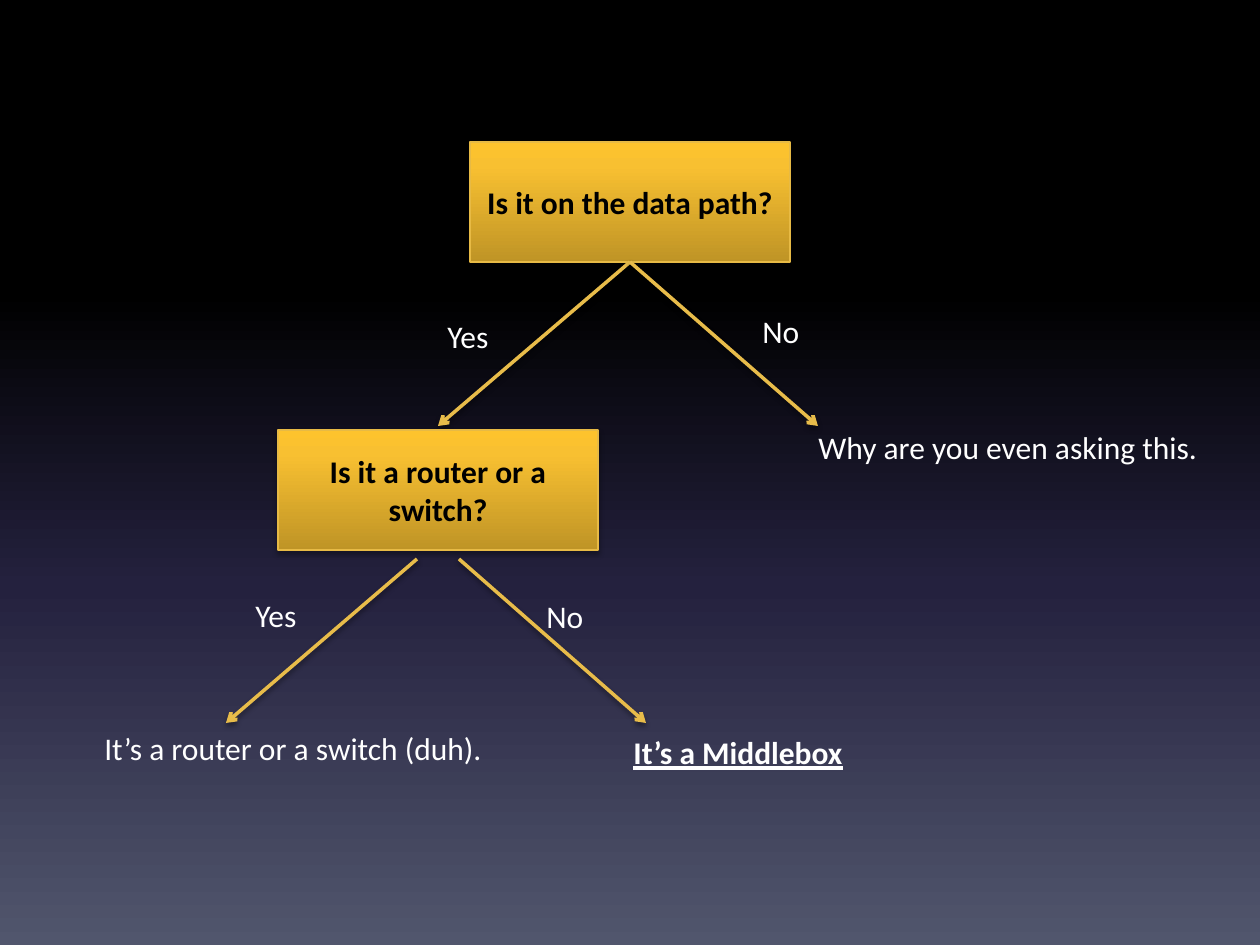
from lxml.etree import SubElement
from pptx import Presentation
from pptx.dml.color import RGBColor
from pptx.enum.shapes import MSO_CONNECTOR as Connector, MSO_SHAPE as Shape
from pptx.enum.text import MSO_ANCHOR as Anchor, MSO_AUTO_SIZE as AutoSize, PP_ALIGN as Align
from pptx.oxml.ns import qn
from pptx.util import Inches, Pt

PX = Inches(1) / 126


def px(*lengths):
    return [round(length * PX) for length in lengths]


def color(hex_string):
    return RGBColor.from_string(hex_string)


class FlowSlide:
    """Hold the style of the decision tree and the slide it is drawn on."""

    backdrop = [(0, "000000"), (31, "000000"), (62, "24213E"), (100, "51566D")]
    gold = [(0, "BF9426"), (80, "F8C031"), (100, "FDC32D")]
    label_format = {"name": "Calibri", "size": Pt(18)}

    def __init__(self, deck):
        self.page = deck.slides.add_slide(deck.slide_layouts[6])
        self.gradient(self.page.background.fill, self.page.element, self.backdrop, 270)

    def gradient(self, fill, element, stops, angle):
        fill.gradient()
        fill.gradient_angle = angle
        stop_list = next(element.iter(qn("a:gsLst")))
        for stop in list(stop_list):
            stop_list.remove(stop)
        for position, value in stops:
            stop = SubElement(stop_list, qn("a:gs"), pos=str(position * 1000))
            SubElement(stop, qn("a:srgbClr"), val=value)

    def outline(self, item, value, width):
        item.line.color.rgb = color(value)
        item.line.width = Pt(width)

    def shadow(self, item, opacity, distance):
        effects = SubElement(item.element.spPr, qn("a:effectLst"))
        drop = SubElement(effects, qn("a:outerShdw"), blurRad=str(Pt(3.1)),
                          dist=str(Pt(distance)), dir="5400000", rotWithShape="0")
        black = SubElement(drop, qn("a:srgbClr"), val="000000")
        SubElement(black, qn("a:alpha"), val=str(opacity * 1000))

    def add_text(self, para, text, value, **extra):
        span = para.add_run()
        span.text = text
        span.font.color.rgb = color(value)
        for name, setting in {**self.label_format, **extra}.items():
            setattr(span.font, name, setting)

    def question(self, left, top, text):
        box = self.page.shapes.add_shape(Shape.RECTANGLE, *px(left, top, 320, 120))
        self.gradient(box.fill, box.element, self.gold, 90)
        self.outline(box, "E7BA45", 0.75)
        self.shadow(box, 35, 1.8)
        frame = box.text_frame
        frame.word_wrap = True
        frame.vertical_anchor = Anchor.MIDDLE
        para = frame.paragraphs[0]
        para.alignment = Align.CENTER
        self.add_text(para, text, "000000", bold=True)
        return box

    def arrow(self, start, end, source=None):
        line = self.page.shapes.add_connector(Connector.STRAIGHT, *px(*start, *end))
        if source is not None:
            line.begin_connect(source, 2)
        self.outline(line, "E8BC4A", 2)
        SubElement(line.element.spPr.find(qn("a:ln")), qn("a:tailEnd"), type="arrow")
        self.shadow(line, 38, 1.6)

    def label(self, left, top, width, text, **extra):
        box = self.page.shapes.add_textbox(*px(left, top, width, 50))
        frame = box.text_frame
        frame.word_wrap = False
        frame.auto_size = AutoSize.SHAPE_TO_FIT_TEXT
        self.add_text(frame.paragraphs[0], text, "FFFFFF", **extra)


def main():
    deck = Presentation()
    deck.slide_width, deck.slide_height = Inches(10), Inches(7.5)
    flow = FlowSlide(deck)

    data_path = flow.question(470, 142, "Is it on the data path?")
    for end in ((438, 426), (818, 426)):
        flow.arrow((630, 262), end, data_path)
    flow.question(278, 430, "Is it a router or a switch?")
    for start, end in (((417, 559), (226, 723)), ((459, 559), (646, 723))):
        flow.arrow(start, end)

    for left, top in ((435, 311), (243, 590)):
        flow.label(left, top, 71, "Yes")
    for left, top in ((750, 306), (534, 591)):
        flow.label(left, top, 64, "No")
    flow.label(806, 422, 413, "Why are you even asking this.")
    flow.label(621, 727, 243, "It’s a Middlebox", bold=True, underline=True)
    flow.label(92, 723, 403, "It’s a router or a switch (duh).")
    deck.save("out.pptx")


if __name__ == "__main__":
    main()
